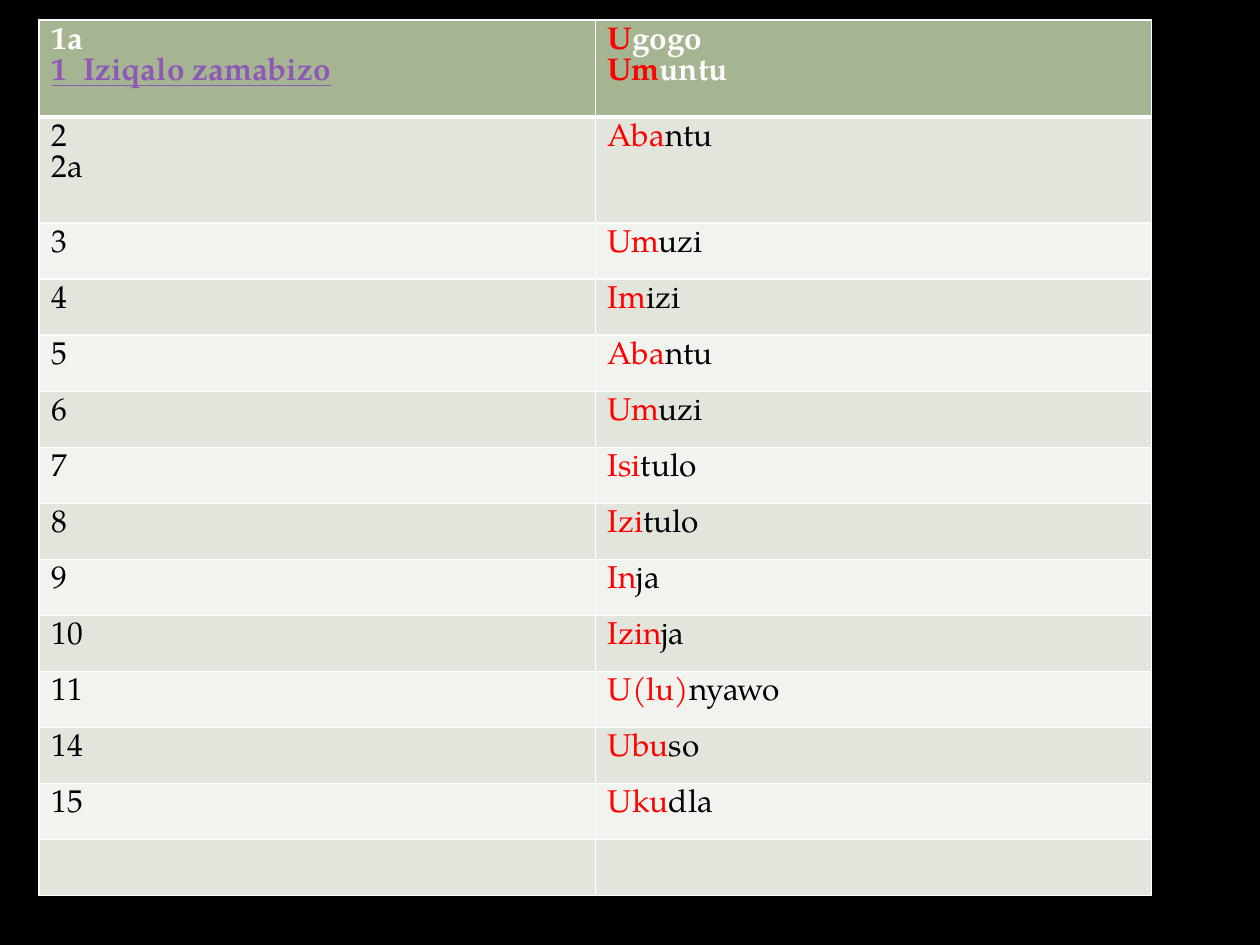
from dataclasses import dataclass

from lxml.etree import SubElement
from pptx import Presentation
from pptx.dml.color import RGBColor
from pptx.oxml.ns import qn
from pptx.util import Cm, Pt


@dataclass(frozen=True)
class Theme:
    font: str = "TeX Gyre Pagella"
    size: int = 18
    background: str = "000000"
    text: str = "000000"
    header_text: str = "FFFFFF"
    prefix: str = "FF0000"
    topic: str = "8E58B6"
    header_fill: str = "A5B592"
    bands: tuple = ("E1E5DC", "F0F3EE")
    border: str = "FFFFFF"
    border_width: int = 1
    header_rule: int = 3


THEME = Theme()
TOPIC = "1  Iziqalo zamabizo"
NOUN_CLASSES = [
    (["1a", TOPIC], [("U", "gogo"), ("Um", "untu")]),
    (["2", "2a"], [("Aba", "ntu")]),
    (["3"], [("Um", "uzi")]),
    (["4"], [("Im", "izi")]),
    (["5"], [("Aba", "ntu")]),
    (["6"], [("Um", "uzi")]),
    (["7"], [("Isi", "tulo")]),
    (["8"], [("Izi", "tulo")]),
    (["9"], [("In", "ja")]),
    (["10"], [("Izin", "ja")]),
    (["11"], [("U(lu)", "nyawo")]),
    (["14"], [("Ubu", "so")]),
    (["15"], [("Uku", "dla")]),
    ([], []),
]
HEADER_HEIGHT, PLURAL_HEIGHT, CLASS_HEIGHT = 1.96, 2.14, 1.13


def set_borders(cell, top, bottom):
    properties = cell._tc.get_or_add_tcPr()
    fill = properties[0]
    widths = {"L": THEME.border_width, "R": THEME.border_width, "T": top, "B": bottom}
    for side, width in widths.items():
        border = SubElement(properties, qn(f"a:ln{side}"), w=str(Pt(width)))
        solid = SubElement(border, qn("a:solidFill"))
        SubElement(solid, qn("a:srgbClr"), val=THEME.border)
        fill.addprevious(border)


def write_lines(cell, lines, bold):
    for index, parts in enumerate(lines):
        paragraph = cell.text_frame.paragraphs[0] if index == 0 else cell.text_frame.add_paragraph()
        paragraph.line_spacing = Pt(THEME.size)
        for wording, color in parts:
            run = paragraph.add_run()
            run.text = wording
            run.font.name = THEME.font
            run.font.size = Pt(THEME.size)
            run.font.bold = bold
            run.font.underline = wording == TOPIC
            run.font.color.rgb = RGBColor.from_string(color)


def add_noun_classes(slide, left, top, width):
    row_count = len(NOUN_CLASSES)
    heights = [HEADER_HEIGHT, PLURAL_HEIGHT] + [CLASS_HEIGHT] * (row_count - 2)
    table = slide.shapes.add_table(
        row_count, 2, Cm(left), Cm(top), Cm(width), Cm(sum(heights))
    ).table
    for column in table.columns:
        column.width = Cm(width / 2)

    for index, (numbers, nouns) in enumerate(NOUN_CLASSES):
        table.rows[index].height = Cm(heights[index])
        is_header = index == 0
        ink = THEME.header_text if is_header else THEME.text
        fill = THEME.header_fill if is_header else THEME.bands[(index - 1) % 2]
        number_lines = [[(number, THEME.topic if number == TOPIC else ink)] for number in numbers]
        noun_lines = [[(prefix, THEME.prefix), (stem, ink)] for prefix, stem in nouns]
        for cell, lines in zip(table.rows[index].cells, (number_lines, noun_lines)):
            cell.fill.solid()
            cell.fill.fore_color.rgb = RGBColor.from_string(fill)
            set_borders(
                cell,
                top=THEME.header_rule if index == 1 else THEME.border_width,
                bottom=THEME.header_rule if is_header else THEME.border_width,
            )
            write_lines(cell, lines, bold=is_header)


def main():
    presentation = Presentation()
    presentation.slide_width, presentation.slide_height = Cm(25.4), Cm(19.05)
    slide = presentation.slides.add_slide(presentation.slide_layouts[6])
    slide.background.fill.solid()
    slide.background.fill.fore_color.rgb = RGBColor.from_string(THEME.background)
    add_noun_classes(slide, left=0.79, top=0.4, width=22.42)
    presentation.save("out.pptx")


if __name__ == "__main__":
    main()
